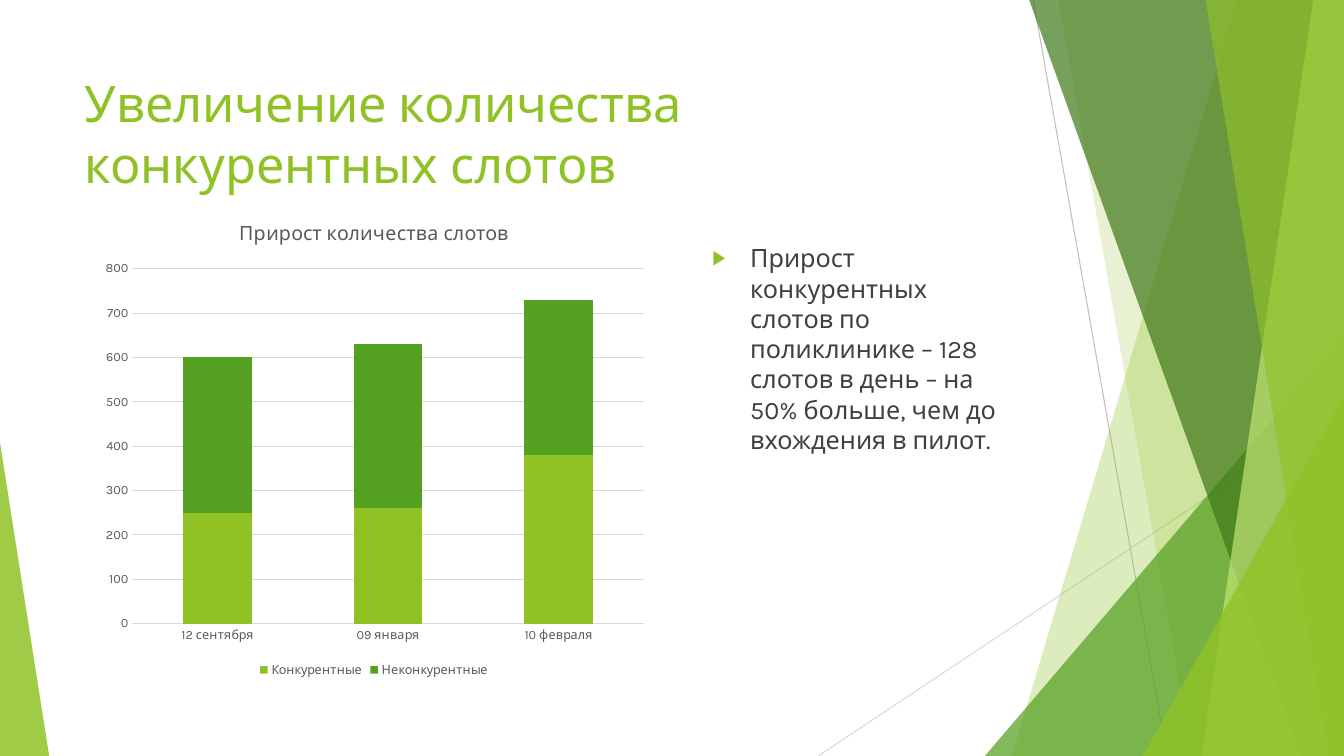
from dataclasses import dataclass

import pptx
import pptx.chart.data
import pptx.dml.color
import pptx.enum.chart
import pptx.enum.shapes
import pptx.enum.text
import pptx.oxml
import pptx.oxml.ns
import pptx.util
from pptx.util import Cm


@dataclass(frozen=True)
class Theme:
    font: str = "Karla"
    lime: str = "90C226"
    green: str = "54A021"
    forest: str = "3F7819"
    pale: str = "C0E474"
    text: str = "404040"
    label: str = "595959"
    grid: str = "D9D9D9"
    ray: str = "BFBFBF"
    title_size: int = 36
    body_size: int = 18
    chart_title_size: int = 14
    chart_size: int = 9
    hairline: float = 0.75


@dataclass(frozen=True)
class Ray:
    start: tuple[float, float]
    end: tuple[float, float]
    color: str


@dataclass(frozen=True)
class Band:
    """Panel with a slanted left edge, reaching the right edge of the slide."""
    top_x: float
    bottom_x: float
    color: str
    opacity: int


@dataclass(frozen=True)
class Wedge:
    """Triangle standing on the bottom edge; apex is 0 (left) to 1 (right)."""
    left: float
    top: float
    width: float
    apex: float
    color: str
    opacity: int


THEME = Theme()
WIDTH, HEIGHT = 33.87, 19.05
BAND_TOP = -0.02

RAYS = [
    Ray((26.04, 0), (29.41, HEIGHT), THEME.ray),
    Ray((WIDTH, 10.24), (20.62, HEIGHT), THEME.grid),
]
FACETS = [
    Band(31.19, 25.5, THEME.lime, 30),
    Band(26.67, 30.05, THEME.lime, 20),
    Wedge(24.82, 8.46, 9.05, 1, THEME.green, 72),
    Band(25.93, 32.79, THEME.forest, 70),
    Band(33.1, 30.28, THEME.pale, 70),
    Band(30.38, 33.48, THEME.lime, 65),
    Wedge(28.8, 9.98, 5.07, 1, THEME.lime, 80),
    Wedge(0, 11.15, 1.24, 0, THEME.lime, 85),
]
DATES = ["12 сентября", "09 января", "10 февраля"]
SLOTS = [
    ("Конкурентные", (250, 260, 380), THEME.lime),
    ("Неконкурентные", (350, 370, 350), THEME.green),
]


def rgb(color: str) -> pptx.dml.color.RGBColor:
    return pptx.dml.color.RGBColor.from_string(color)


def style_font(font, size: float, color: str) -> None:
    font.name = THEME.font
    font.size = pptx.util.Pt(size)
    font.bold = False
    font.color.rgb = rgb(color)


def style_line(line, color: str) -> None:
    line.color.rgb = rgb(color)
    line.width = pptx.util.Pt(THEME.hairline)


def place(shape, left: float, top: float, width: float, height: float) -> None:
    shape.left, shape.top = Cm(left), Cm(top)
    shape.width, shape.height = Cm(width), Cm(height)


def draw_ray(slide, ray: Ray) -> None:
    connector = slide.shapes.add_connector(
        pptx.enum.shapes.MSO_CONNECTOR.STRAIGHT,
        *(Cm(value) for value in ray.start + ray.end))
    style_line(connector.line, ray.color)
    properties = connector._element.spPr
    properties.append(properties.makeelement(pptx.oxml.ns.qn("a:effectLst")))


def draw_facet(slide, facet: Band | Wedge) -> None:
    if isinstance(facet, Band):
        builder = slide.shapes.build_freeform(Cm(facet.top_x), Cm(BAND_TOP))
        builder.add_line_segments([
            (Cm(WIDTH), Cm(BAND_TOP)), (Cm(WIDTH), Cm(HEIGHT)),
            (Cm(facet.bottom_x), Cm(HEIGHT))])
        shape = builder.convert_to_shape()
    else:
        shape = slide.shapes.add_shape(
            pptx.enum.shapes.MSO_SHAPE.ISOSCELES_TRIANGLE, Cm(facet.left),
            Cm(facet.top), Cm(facet.width), Cm(HEIGHT - facet.top))
        shape.adjustments[0] = facet.apex
    shape.shadow.inherit = False
    shape.line.fill.background()
    shape.fill.solid()
    shape.fill.fore_color.rgb = rgb(facet.color)
    color = shape._element.spPr.find(".//" + pptx.oxml.ns.qn("a:srgbClr"))
    alpha = color.makeelement(pptx.oxml.ns.qn("a:alpha"))
    alpha.set("val", str(facet.opacity * 1000))
    color.append(alpha)


def fill_placeholder(slide, placeholder, text: str, size: int, color: str):
    """Write one left-aligned paragraph, bring it to the front, return it."""
    frame = placeholder.text_frame
    frame.text = text
    frame.word_wrap = True
    frame.auto_size = pptx.enum.text.MSO_AUTO_SIZE.NONE
    frame.vertical_anchor = pptx.enum.text.MSO_ANCHOR.TOP
    paragraph = frame.paragraphs[0]
    paragraph.alignment = pptx.enum.text.PP_ALIGN.LEFT
    style_font(paragraph.font, size, color)
    slide.shapes._spTree.append(placeholder._element)
    return paragraph


def add_arrow_bullet(paragraph) -> None:
    paragraph.space_before = pptx.util.Pt(10)
    properties = paragraph._p.get_or_add_pPr()
    properties.set("marL", str(Cm(0.95)))
    properties.set("indent", str(-Cm(0.95)))
    namespace = pptx.oxml.ns.nsdecls("a")
    for xml in (f'<a:buClr {namespace}><a:srgbClr val="{THEME.lime}"/></a:buClr>',
                f'<a:buSzPct {namespace} val="80000"/>',
                f'<a:buFont {namespace} typeface="Arial"/>',
                f'<a:buChar {namespace} char="▶"/>'):
        properties.insert_element_before(
            pptx.oxml.parse_xml(xml), "a:tabLst", "a:defRPr", "a:extLst")


def set_plot_area(chart, x: float, y: float, width: float, height: float) -> None:
    """Fix the inner plot area, in fractions of the chart."""
    plot_area = chart._chartSpace.chart.plotArea
    for layout in plot_area.findall(pptx.oxml.ns.qn("c:layout")):
        plot_area.remove(layout)
    sizes = "".join(f'<c:{name} val="{value}"/>' for name, value in
                    (("x", x), ("y", y), ("w", width), ("h", height)))
    plot_area.insert(0, pptx.oxml.parse_xml(
        f'<c:layout {pptx.oxml.ns.nsdecls("c")}><c:manualLayout>'
        '<c:layoutTarget val="inner"/><c:xMode val="edge"/><c:yMode val="edge"/>'
        f'{sizes}</c:manualLayout></c:layout>'))


def draw_slots_chart(slide) -> None:
    data = pptx.chart.data.CategoryChartData()
    data.categories = DATES
    for name, values, _ in SLOTS:
        data.add_series(name, values)
    chart = slide.shapes.add_chart(
        pptx.enum.chart.XL_CHART_TYPE.COLUMN_STACKED,
        Cm(2.34), Cm(5.08), Cm(14.17), Cm(12.09), data).chart
    style_font(chart.font, THEME.chart_size, THEME.label)
    chart.has_title = True
    chart.chart_title.text_frame.text = "Прирост количества слотов"
    style_font(chart.chart_title.text_frame.paragraphs[0].font,
               THEME.chart_title_size, THEME.label)
    chart.has_legend = True
    chart.legend.position = pptx.enum.chart.XL_LEGEND_POSITION.BOTTOM
    chart.legend.include_in_layout = False
    plot = chart.plots[0]
    plot.gap_width, plot.overlap = 150, 100
    plot.vary_by_categories = False
    for series, (_, _, color) in zip(plot.series, SLOTS):
        series.format.fill.solid()
        series.format.fill.fore_color.rgb = rgb(color)
    for axis in (chart.category_axis, chart.value_axis):
        axis.major_tick_mark = pptx.enum.chart.XL_TICK_MARK.NONE
        style_font(axis.tick_labels.font, THEME.chart_size, THEME.label)
    style_line(chart.category_axis.format.line, THEME.grid)
    values_axis = chart.value_axis
    values_axis.format.line.fill.background()
    values_axis.minimum_scale, values_axis.maximum_scale = 0, 800
    values_axis.major_unit = 100
    style_line(values_axis.major_gridlines.format.line, THEME.grid)
    set_plot_area(chart, 0.07, 0.14, 0.91, 0.74)


def main() -> None:
    presentation = pptx.Presentation()
    presentation.slide_width, presentation.slide_height = Cm(WIDTH), Cm(HEIGHT)
    slide = presentation.slides.add_slide(presentation.slide_layouts[1])
    for ray in RAYS:
        draw_ray(slide, ray)
    for facet in FACETS:
        draw_facet(slide, facet)
    title, body = slide.shapes.title, slide.placeholders[1]
    place(title, 1.88, 1.7, 23.88, 3.66)
    fill_placeholder(slide, title, "Увеличение количества конкурентных слотов",
                     THEME.title_size, THEME.lime)
    place(body, 17.7, 5.99, 8.08, 10.77)
    add_arrow_bullet(fill_placeholder(
        slide, body, "Прирост конкурентных слотов по поликлинике – 128 слотов "
        "в день – на 50% больше, чем до вхождения в пилот.",
        THEME.body_size, THEME.text))
    draw_slots_chart(slide)
    presentation.save("out.pptx")


if __name__ == "__main__":
    main()
